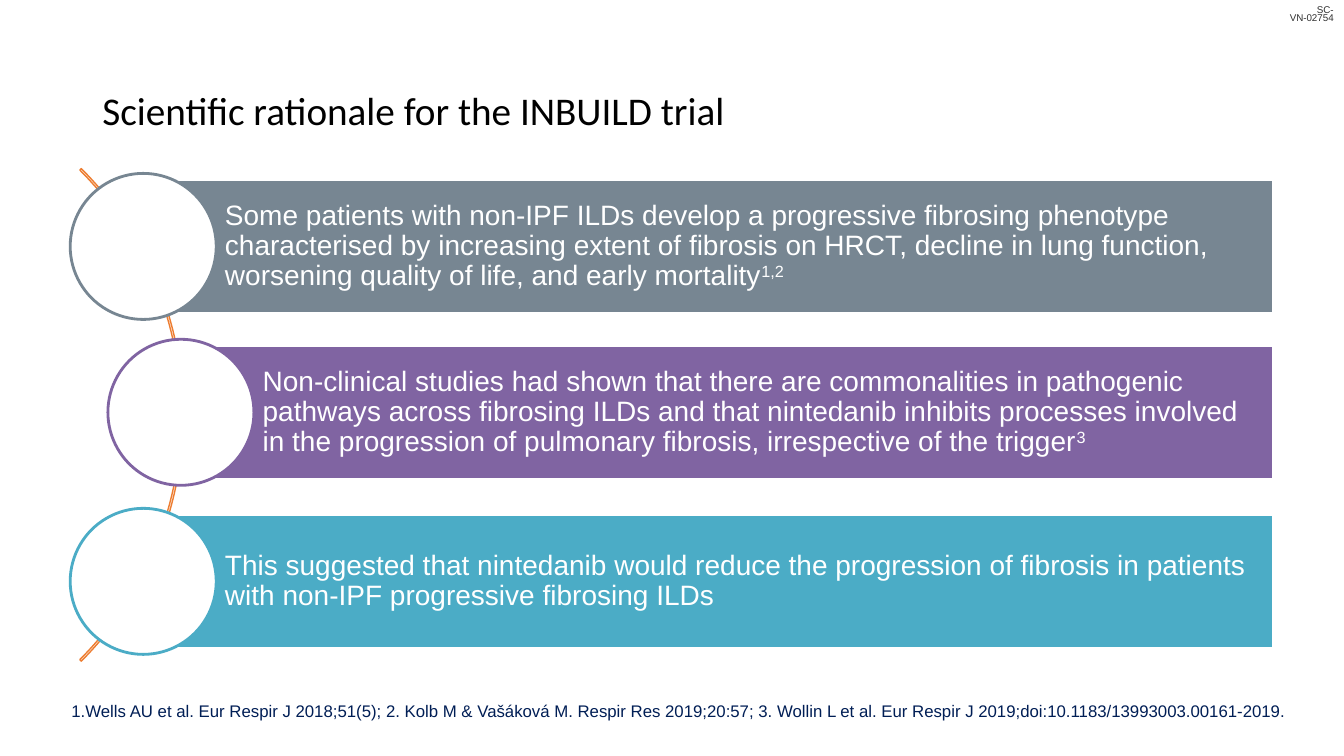
from pptx import Presentation
from pptx.dml.color import RGBColor
from pptx.enum.shapes import MSO_SHAPE as Shape
from pptx.enum.text import MSO_ANCHOR as Anchor, PP_ALIGN as Align
from pptx.util import Cm, Pt

COLORS = {
    "white": "FFFFFF",
    "black": "000000",
    "code": "303030",
    "navy": "001E55",
    "orange": "ED7D31",
    "slate": "778692",
    "purple": "8064A2",
    "teal": "4BACC6",
}

BAR_RIGHT = 32.1
BAR_HEIGHT = 3.38
CIRCLE_SIZE = 3.68
BAR_INSETS = {"margin_left": 2.06, "margin_top": 0.16, "margin_right": 0.16, "margin_bottom": 0.16}

# Bar left (also the circle's centre), vertical centre, colour, text, citation
REASONS = [
    (3.61, 6.21, "slate",
     "Some patients with non-IPF ILDs develop a progressive fibrosing phenotype "
     "characterised by increasing extent of fibrosis on HRCT, decline in lung function, "
     "worsening quality of life, and early mortality", "1,2"),
    (4.56, 10.39, "purple",
     "Non-clinical studies had shown that there are commonalities in pathogenic pathways "
     "across fibrosing ILDs and that nintedanib inhibits processes involved in the "
     "progression of pulmonary fibrosis, irrespective of the trigger", "3"),
    (3.61, 14.65, "teal",
     "This suggested that nintedanib would reduce the progression of fibrosis in patients "
     "with non-IPF progressive fibrosing ILDs", ""),
]


def rgb(color):
    return RGBColor.from_string(COLORS[color])


def add_run(paragraph, text, size, color, font="Arial"):
    run = paragraph.add_run()
    run.text = text
    for name, value in {"name": font, "size": Pt(size)}.items():
        setattr(run.font, name, value)
    run.font.color.rgb = rgb(color)
    return run


def add_text(slide, box, text, size, color, font="Arial", anchor=Anchor.TOP, **paragraph_format):
    text_frame = slide.shapes.add_textbox(*map(Cm, box)).text_frame
    text_frame.word_wrap = True
    text_frame.vertical_anchor = anchor
    paragraph = text_frame.paragraphs[0]
    for name, value in paragraph_format.items():
        setattr(paragraph, name, value)
    add_run(paragraph, text, size, color, font)


def add_figure(slide, kind, box, line, width, fill=None):
    shape = slide.shapes.add_shape(kind, *map(Cm, box))
    shape.shadow.inherit = False
    if fill:
        shape.fill.solid()
        shape.fill.fore_color.rgb = rgb(fill)
    else:
        shape.fill.background()
    shape.line.color.rgb = rgb(line)
    shape.line.width = Pt(width)
    return shape


def add_arc(slide):
    """Draw the thin arc that runs behind the circles, from 315 to 45 degrees."""
    arc = add_figure(slide, Shape.BLOCK_ARC, (-12.93, 1.68, 17.55, 17.55), "orange", 1)
    for index, value in enumerate((189, 27, 0.003)):
        arc.adjustments[index] = value


def add_reason(slide, left, middle, color, text, citation):
    """Draw one bar with its text, and the circle centred on its left edge."""
    bar_box = (left, middle - BAR_HEIGHT / 2, BAR_RIGHT - left, BAR_HEIGHT)
    bar = add_figure(slide, Shape.RECTANGLE, bar_box, "white", 2, color)
    text_frame = bar.text_frame
    text_frame.word_wrap = True
    text_frame.vertical_anchor = Anchor.MIDDLE
    for name, value in BAR_INSETS.items():
        setattr(text_frame, name, Cm(value))
    paragraph = text_frame.paragraphs[0]
    paragraph.alignment = Align.LEFT
    paragraph.line_spacing = 0.9
    add_run(paragraph, text, 20, "white")
    if citation:
        superscript = add_run(paragraph, citation, 20, "white")
        superscript.font._element.set("baseline", "30000")

    radius = CIRCLE_SIZE / 2
    circle_box = (left - radius, middle - radius, CIRCLE_SIZE, CIRCLE_SIZE)
    add_figure(slide, Shape.OVAL, circle_box, color, 2, "white")


def main():
    presentation = Presentation()
    presentation.slide_width = Cm(33.87)
    presentation.slide_height = Cm(19.05)
    slide = presentation.slides.add_slide(presentation.slide_layouts[6])

    add_text(slide, (31.98, 0.05, 1.88, 0.41), "SC-VN-02754", 7, "code",
             alignment=Align.RIGHT, line_spacing=0.7)
    add_text(slide, (2.33, 1.01, 29.21, 3.68), "Scientific rationale for the INBUILD trial",
             28, "black", "Calibri", Anchor.MIDDLE, line_spacing=0.9)
    add_text(slide, (1.55, 16.8, 31.52, 1.5),
             "1.Wells AU et al. Eur Respir J 2018;51(5); 2. Kolb M & Vašáková M. Respir Res "
             "2019;20:57; 3. Wollin L et al. Eur Respir J 2019;doi:10.1183/13993003.00161-2019.",
             12, "navy", anchor=Anchor.BOTTOM)
    add_arc(slide)
    for reason in REASONS:
        add_reason(slide, *reason)

    presentation.save("out.pptx")


if __name__ == "__main__":
    main()
